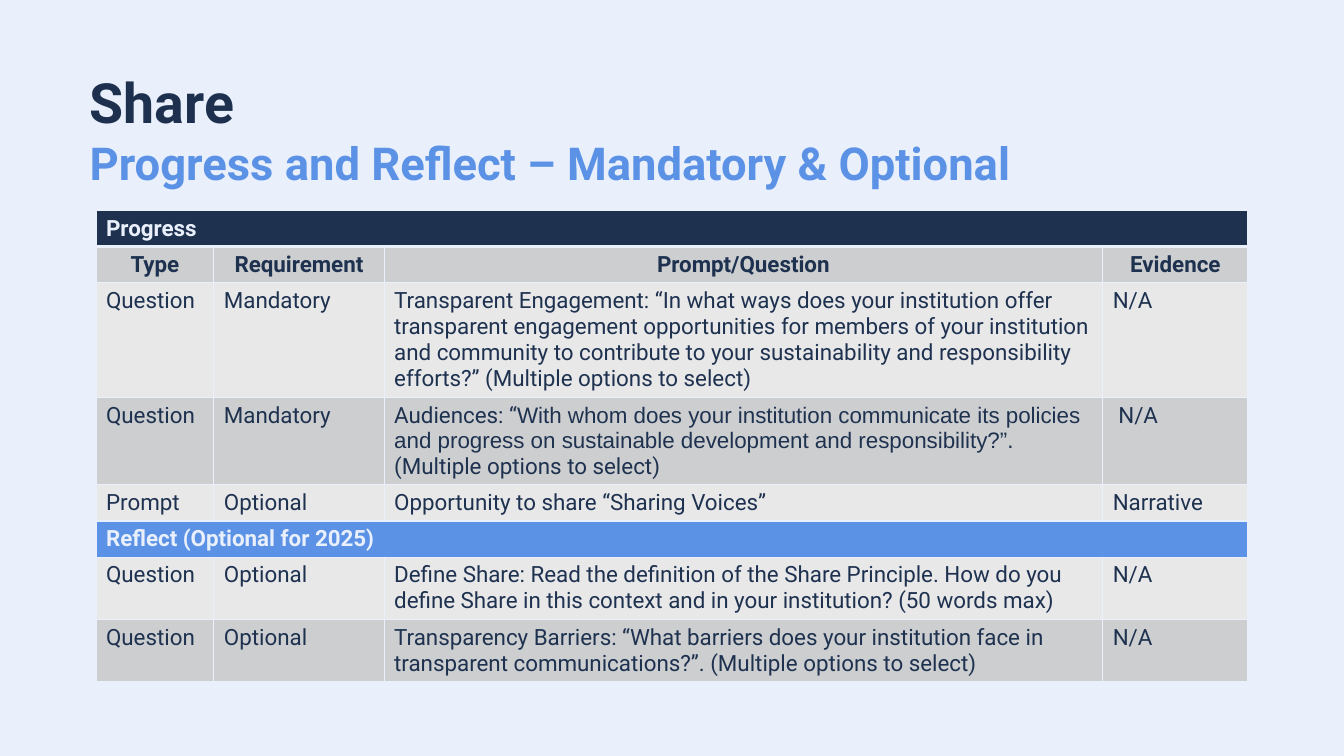
from pptx import Presentation
from pptx.dml.color import RGBColor
from pptx.enum.text import MSO_ANCHOR as Anchor, MSO_AUTO_SIZE as AutoSize, PP_ALIGN as Align
from pptx.util import Cm, Pt
from lxml.etree import SubElement
from pptx.oxml.ns import qn

PALE = RGBColor(0xE9, 0xF0, 0xFC)
NAVY = RGBColor(0x1E, 0x32, 0x50)
TITLE_NAVY = RGBColor(0x1D, 0x31, 0x4F)
BLUE = RGBColor(0x5B, 0x92, 0xE5)
GREY = RGBColor(0xCD, 0xCE, 0xD0)
LIGHT_GREY = RGBColor(0xE8, 0xE8, 0xE9)

COLUMN_WIDTHS = [2.97, 4.29, 18.11, 3.66]
AUDIENCES = [
    ("Audiences: “", "Roboto"),
    ("With whom does your institution communicate its policies and progress on "
     "sustainable development and responsibility?”. ", "Arial"),
    ("(Multiple options to select)", "Roboto"),
]
# (height, fill, text colour, bold, cells)
ROWS = [
    (0.91, NAVY, PALE, True, ["Progress"]),
    (0.91, GREY, NAVY, True, ["Type", "Requirement", "Prompt/Question", "Evidence"]),
    (2.9, LIGHT_GREY, NAVY, False, [
        "Question", "Mandatory",
        "Transparent Engagement: “In what ways does your institution offer transparent "
        "engagement opportunities for members of your institution and community to "
        "contribute to your sustainability and responsibility efforts?” "
        "(Multiple options to select)", "N/A"]),
    (2.19, GREY, NAVY, False, ["Question", "Mandatory", AUDIENCES, " N/A"]),
    (0.91, LIGHT_GREY, NAVY, False, [
        "Prompt", "Optional", "Opportunity to share “Sharing Voices”", "Narrative"]),
    (0.91, BLUE, PALE, True, ["Reflect (Optional for 2025)"]),
    (1.56, LIGHT_GREY, NAVY, False, [
        "Question", "Optional",
        "Define Share: Read the definition of the Share Principle. How do you define "
        "Share in this context and in your institution? (50 words max)", "N/A"]),
    (1.56, GREY, NAVY, False, [
        "Question", "Optional",
        "Transparency Barriers: “What barriers does your institution face in transparent "
        "communications?”. (Multiple options to select)", "N/A"]),
]


def add_run(paragraph, text, size, color, bold, font="Roboto"):
    run = paragraph.add_run()
    run.text = text
    run.font.name = font
    run.font.size = Pt(size)
    run.font.bold = bold
    run.font.color.rgb = color


def add_borders(cell, bottom_width):
    properties = cell._tc.get_or_add_tcPr()
    for side, width in (("L", 1), ("R", 1), ("T", 1), ("B", bottom_width)):
        line = SubElement(properties, qn(f"a:ln{side}"), w=str(Pt(width)))
        SubElement(SubElement(line, qn("a:solidFill")), qn("a:srgbClr"), val=str(PALE))


prs = Presentation()
prs.slide_width = Cm(33.87)
prs.slide_height = Cm(19.05)
slide = prs.slides.add_slide(prs.slide_layouts[5])
slide.background.fill.solid()
slide.background.fill.fore_color.rgb = PALE

heading = slide.shapes.title
heading.left, heading.top, heading.width, heading.height = Cm(1.93), Cm(1.27), Cm(29.41), Cm(3.53)
heading_frame = heading.text_frame
heading_frame.auto_size = AutoSize.NONE
heading_frame.word_wrap = True
heading_frame.vertical_anchor = Anchor.TOP
heading_frame.margin_left = heading_frame.margin_right = heading_frame.margin_bottom = Cm(0.33)
heading_frame.margin_top = Cm(0.45)
heading_line = heading_frame.paragraphs[0]
heading_line.alignment = Align.LEFT
add_run(heading_line, "Share", 39.6, TITLE_NAVY, True)
heading_line.add_line_break()
add_run(heading_line, "Progress and Reflect – Mandatory & Optional", 32.4, BLUE, True)

prompts = slide.shapes.add_table(
    len(ROWS), len(COLUMN_WIDTHS), Cm(2.42), Cm(5.3),
    Cm(sum(COLUMN_WIDTHS)), Cm(sum(row[0] for row in ROWS))).table
prompts.first_row = False
prompts.horz_banding = False
for column, width in zip(prompts.columns, COLUMN_WIDTHS):
    column.width = Cm(width)

for index, (height, fill, color, bold, texts) in enumerate(ROWS):
    prompts.rows[index].height = Cm(height)
    cells = list(prompts.rows[index].cells)
    for cell in cells:
        add_borders(cell, 3 if index == 0 else 1)
        cell.fill.solid()
        cell.fill.fore_color.rgb = fill
    if len(texts) == 1:
        cells[0].merge(cells[-1])
    for cell, text in zip(cells, texts):
        cell.vertical_anchor = Anchor.MIDDLE if index < 2 else Anchor.TOP
        paragraph = cell.text_frame.paragraphs[0]
        paragraph.alignment = Align.CENTER if index == 1 else Align.LEFT
        pieces = [(text, "Roboto")] if isinstance(text, str) else text
        for words, font in pieces:
            add_run(paragraph, words, 16, color, bold, font)

prs.save("out.pptx")
